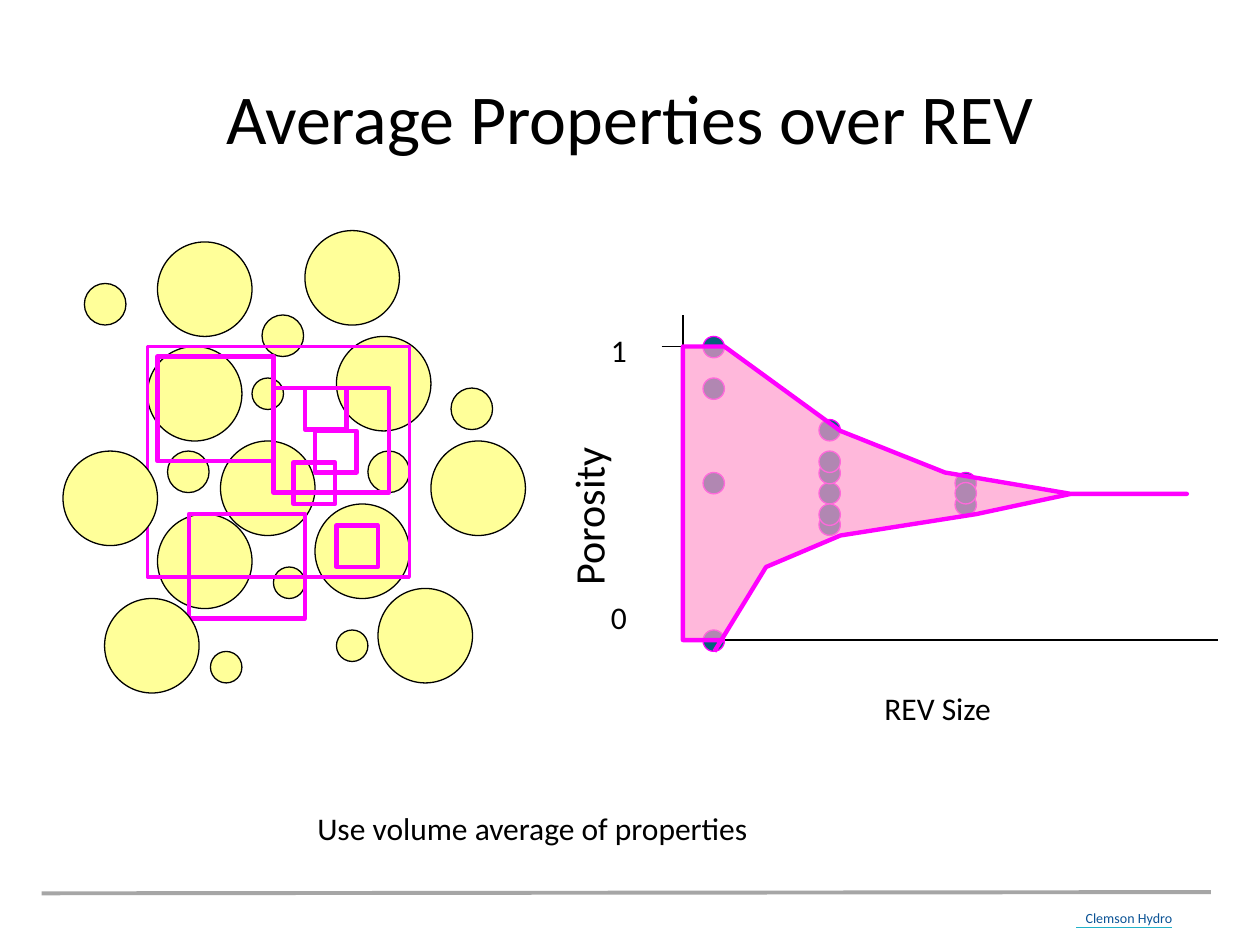
from lxml import etree
from pptx import Presentation
from pptx.dml.color import RGBColor
from pptx.enum.shapes import MSO_CONNECTOR, MSO_SHAPE
from pptx.enum.text import MSO_ANCHOR, PP_ALIGN
from pptx.oxml.ns import qn
from pptx.util import Inches, Pt

OVAL, RECTANGLE = MSO_SHAPE.OVAL, MSO_SHAPE.RECTANGLE
STRAIGHT = MSO_CONNECTOR.STRAIGHT
LEFT, CENTER = PP_ALIGN.LEFT, PP_ALIGN.CENTER
TOP, MIDDLE = MSO_ANCHOR.TOP, MSO_ANCHOR.MIDDLE

COLORS = {
    "text": "000000",
    "grain": "FFFF99",
    "sample": "FF00FF",
    "dot": "04617B",
    "envelope": "FF99CC",
    "rule": "A6A6A6",
    "link": "0B5395",
    "underline": "21B2C9",
}
DOT_SIZE = 0.17

# Grain diameters with the top left corners of the grains
INNER_GRAINS = {
    0.75: [(1.17, 2.75), (1.75, 3.5), (1.25, 4.08), (2.67, 2.67), (2.5, 4)],
    0.33: [(2.92, 3.58), (1.33, 3.58), (2.08, 2.5)],
    0.25: [(2, 3), (2.17, 4.5)],
}
OUTER_GRAINS = {
    0.25: [(2.67, 5), (1.67, 5.17)],
    0.75: [(3, 4.67), (3.42, 3.5), (0.83, 4.75), (2.42, 1.83), (0.5, 3.58), (1.25, 1.92)],
    0.33: [(0.67, 2.25), (3.58, 3.08)],
}
# Sample volumes: (width, height, line width) with top left corners
SAMPLES = {
    (0.33, 0.33, 2.5): [(2.42, 3.08), (2.33, 3.67), (2.67, 4.17), (2.5, 3.42)],
    (0.92, 0.83, 2.5): [(1.5, 4.08), (2.17, 3.08), (1.25, 2.83)],
    (2.08, 1.83, 1.75): [(1.17, 2.75)],
}
# Dot column position with the heights of its dots
POROSITY_DOTS = {
    5.58: [3.75, 5, 3, 2.67],
    6.5: [4.08, 3.33, 3.83, 4, 3.67, 3.58],
    7.58: [3.75, 3.92, 3.83],
}
AXES = [(5.42, 2.5), (5.42, 5.08), (9.67, 5.08)]
ENVELOPE = [
    (5.67, 5.17), (6.08, 4.5), (6.67, 4.25), (7.75, 4.08), (8.5, 3.92),
    (9.42, 3.92), (8.5, 3.92), (7.5, 3.75), (6.67, 3.42), (5.75, 2.75),
    (5.42, 2.75), (5.42, 5.08), (5.67, 5.08), (5.75, 5.08),
]


def rgb(name):
    return RGBColor.from_string(COLORS[name])


def style_shape(shape, fill, line, width):
    shape.shadow.inherit = False
    if fill:
        shape.fill.solid()
        shape.fill.fore_color.rgb = rgb(fill)
    else:
        shape.fill.background()
    shape.line.color.rgb = rgb(line)
    shape.line.width = Pt(width)


def add_preset(page, kind, left, top, width, height, fill, line, weight):
    shape = page.shapes.add_shape(
        kind, Inches(left), Inches(top), Inches(width), Inches(height))
    style_shape(shape, fill, line, weight)


def add_grains(page, grains):
    for size, corners in grains.items():
        for left, top in corners:
            add_preset(page, OVAL, left, top, size, size, "grain", "text", 0.75)


def add_samples(page):
    for (width, height, weight), corners in SAMPLES.items():
        for left, top in corners:
            add_preset(page, RECTANGLE, left, top, width, height, None, "sample", weight)


def add_dots(page):
    for left, tops in POROSITY_DOTS.items():
        for top in tops:
            add_preset(page, OVAL, left, top, DOT_SIZE, DOT_SIZE, "dot", "sample", 0.75)


def add_outline(page, points, fill, line, weight):
    """Draw an open path through the points."""
    corners = [(Inches(x), Inches(y)) for x, y in points]
    builder = page.shapes.build_freeform(*corners[0])
    builder.add_line_segments(corners[1:], close=False)
    shape = builder.convert_to_shape()
    style_shape(shape, fill, line, weight)
    return shape


def set_opacity(shape, percent):
    color = shape.fill._xPr.find(qn("a:solidFill"))[0]
    etree.SubElement(color, qn("a:alpha"), val=str(percent * 1000))


def add_line(page, start, end, color, weight):
    line = page.shapes.add_connector(
        STRAIGHT, *(Inches(value) for value in (*start, *end)))
    line.line.color.rgb = rgb(color)
    line.line.width = Pt(weight)
    etree.SubElement(line._element.spPr, qn("a:effectLst"))


def add_text(page, left, top, width, height, lines, size=18, color="text",
             align=LEFT, anchor=TOP, rotation=0, gap=0):
    """Add a text box; gap is the space in points between its lines."""
    box = page.shapes.add_textbox(
        Inches(left), Inches(top), Inches(width), Inches(height))
    box.rotation = rotation
    frame = box.text_frame
    frame.word_wrap = True
    frame.vertical_anchor = anchor
    font_format = {"name": "Calibri", "size": Pt(size)}
    for index, text in enumerate(lines):
        para = frame.add_paragraph() if index else frame.paragraphs[0]
        para.alignment = align
        para.space_before = Pt(gap if index else 0)
        span = para.add_run()
        span.text = text
        for name, value in font_format.items():
            setattr(span.font, name, value)
        span.font.color.rgb = rgb(color)


def add_footer(page):
    add_line(page, (0.33, 7.09), (9.61, 7.08), "rule", 2.25)
    add_text(page, 8.5, 7.17, 0.92, 0.24, ["Clemson Hydro"], size=8,
             color="link", align=CENTER)
    add_line(page, (8.54, 7.36), (9.3, 7.36), "underline", 0.75)


def add_porosity_plot(page):
    add_outline(page, AXES, None, "text", 1.5)
    add_line(page, (5.25, 2.75), (5.42, 2.75), "text", 0.75)
    add_text(page, 4.75, 2.58, 0.92, 2.66, ["1", "0"], gap=131)
    add_text(page, 6.92, 5.42, 1.75, 0.4, ["REV Size"])
    add_dots(page)
    envelope = add_outline(page, ENVELOPE, "envelope", "sample", 2.5)
    set_opacity(envelope, 69)
    add_text(page, 3.79, 3.62, 1.75, 0.5, ["Porosity"], size=24, rotation=270)


def main():
    deck = Presentation()
    deck.slide_width, deck.slide_height = Inches(10), Inches(7.5)
    page = deck.slides.add_slide(deck.slide_layouts[6])
    add_footer(page)
    add_text(page, 0.5, 0.3, 9, 1.25, ["Average Properties over REV"], size=40,
             align=CENTER, anchor=MIDDLE)
    add_grains(page, INNER_GRAINS)
    add_samples(page)
    add_porosity_plot(page)
    add_grains(page, OUTER_GRAINS)
    add_text(page, 2.42, 6.37, 4.33, 0.4, ["Use volume average of properties"])
    deck.save("out.pptx")


if __name__ == "__main__":
    main()
